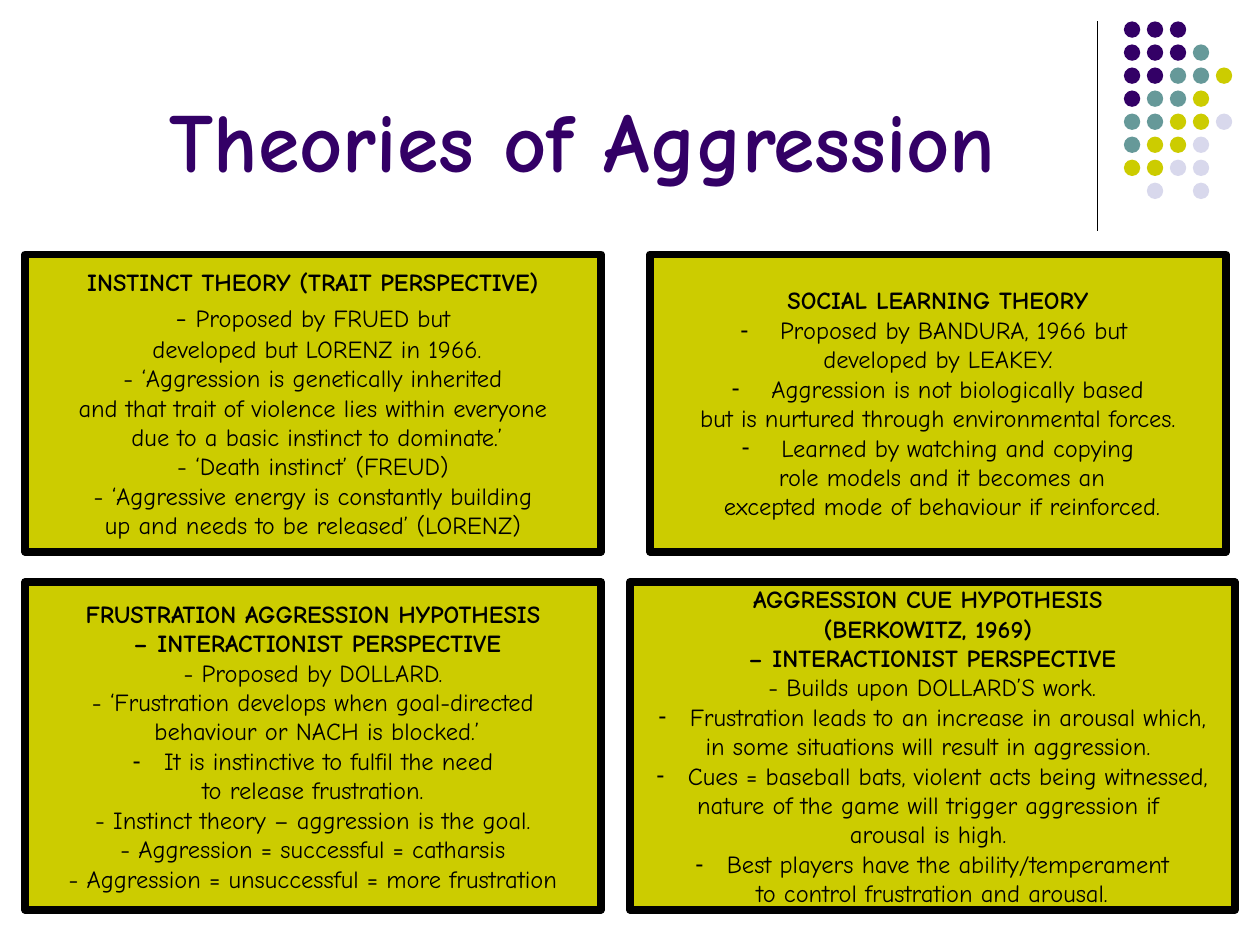
"""Build the Theories of Aggression slide with four theory panels."""
from dataclasses import dataclass
from typing import NamedTuple

from lxml.etree import SubElement
from pptx import Presentation
from pptx.dml.color import RGBColor
from pptx.enum.shapes import MSO_CONNECTOR, MSO_SHAPE
from pptx.enum.text import MSO_ANCHOR, MSO_AUTO_SIZE, PP_ALIGN
from pptx.oxml.ns import qn
from pptx.slide import Slide
from pptx.text.text import _Paragraph as Paragraph
from pptx.util import Inches, Pt

COLORS = {
    "purple": "330066",
    "teal": "669999",
    "lime": "CCCC00",
    "lavender": "D8D8EC",
    "black": "000000",
}
DOT_COLORS = {"P": "purple", "T": "teal", "L": "lime", "V": "lavender"}
DOT_ROWS = ["PPP", "PPPT", "PPTTL", "PTTL", "TTLLV", "TLLV", "LLVV", " V V"]
DOT_LEFT, DOT_TOP, DOT_SIZE = 8.92, 0.17, 0.13
DOT_STEP_X, DOT_STEP_Y = 0.73 / 4, 1.28 / 7
BODY_FONT = "Comic Neue"
BULLET_INDENT = Inches(0.25)


class Run(NamedTuple):
    """A piece of text with its size and font."""
    text: str
    size: int = 14
    font: str = BODY_FONT


class Line(NamedTuple):
    """One paragraph of a panel."""
    text: str
    bold: bool = False
    bulleted: bool = False
    prefix: tuple[Run, ...] = ()


@dataclass
class Panel:
    """A bordered box that describes one theory."""
    left: float
    top: float
    width: float
    height: float
    lines: list[Line]


def heading(text: str) -> Line:
    """Return a bold line."""
    return Line(text, bold=True)


def bullet(text: str) -> Line:
    """Return a line with a dash bullet."""
    return Line(text, bulleted=True)


PANELS = [
    Panel(0.2, 2.02, 4.57, 2.36, [
        heading("INSTINCT THEORY (TRAIT PERSPECTIVE)"),
        Line("Proposed by FRUED but", prefix=(Run("-", 16), Run(" ", 18, "Arial"))),
        Line(" developed but LORENZ in 1966."),
        Line("- ‘Aggression is genetically inherited"),
        Line("and that trait of violence lies within everyone"),
        Line(" due to a basic instinct to dominate.’"),
        Line("- ‘Death instinct’ (FREUD)"),
        Line("- ‘Aggressive energy is constantly building"),
        Line("up and needs to be released’ (LORENZ)"),
    ]),
    Panel(5.16, 2.02, 4.57, 2.36, [
        heading("SOCIAL LEARNING THEORY"),
        bullet(" Proposed by BANDURA, 1966 but "),
        Line("developed by LEAKEY."),
        bullet(" Aggression is not biologically based"),
        Line("but is nurtured through environmental forces."),
        bullet(" Learned by watching and copying"),
        Line(" role models and it becomes an"),
        Line(" excepted mode of behaviour if reinforced."),
    ]),
    Panel(0.2, 4.62, 4.57, 2.6, [
        heading("FRUSTRATION AGGRESSION HYPOTHESIS"),
        heading(" – INTERACTIONIST PERSPECTIVE"),
        Line("- Proposed by DOLLARD."),
        Line("- ‘Frustration develops when goal-directed"),
        Line(" behaviour or NACH is blocked.’"),
        bullet("It is instinctive to fulfil the need"),
        Line("to release frustration."),
        Line("- Instinct theory – aggression is the goal."),
        Line("- Aggression = successful = catharsis"),
        Line("- Aggression = unsuccessful = more frustration"),
    ]),
    Panel(5, 4.62, 4.8, 2.6, [
        heading("AGGRESSION CUE HYPOTHESIS "),
        heading("(BERKOWITZ, 1969) "),
        heading("– INTERACTIONIST PERSPECTIVE"),
        Line("- Builds upon DOLLARD’S work."),
        bullet("Frustration leads to an increase in arousal which,"),
        Line("in some situations will result in aggression. "),
        bullet("Cues = baseball bats, violent acts being witnessed,"),
        Line("nature of the game will trigger aggression if "),
        Line("arousal is high. "),
        bullet("Best players have the ability/temperament"),
        Line("to control frustration and arousal."),
    ]),
]


def color(name: str) -> RGBColor:
    """Look up a palette colour."""
    return RGBColor.from_string(COLORS[name])


def add_run(paragraph: Paragraph, piece: Run, bold: bool, color_name: str) -> None:
    """Append a formatted run."""
    run = paragraph.add_run()
    run.text = piece.text
    formats = {"size": Pt(piece.size), "name": piece.font, "bold": bold}
    for attribute, value in formats.items():
        setattr(run.font, attribute, value)
    run.font.color.rgb = color(color_name)


def add_dash_bullet(paragraph: Paragraph) -> None:
    """Give a paragraph a hanging dash."""
    properties = paragraph._p.get_or_add_pPr()
    properties.set("marL", str(BULLET_INDENT))
    properties.set("indent", str(-BULLET_INDENT))
    SubElement(properties, qn("a:buFont"), typeface="Arial")
    SubElement(properties, qn("a:buChar"), char="-")


def add_title(slide: Slide, text: str) -> None:
    """Place and format the title placeholder."""
    title = slide.shapes.title
    box = {"left": 0.5, "top": 0.13, "width": 8.25, "height": 1.42}
    for attribute, value in box.items():
        setattr(title, attribute, Inches(value))
    frame = title.text_frame
    frame.auto_size = MSO_AUTO_SIZE.NONE
    frame.vertical_anchor = MSO_ANCHOR.BOTTOM
    paragraph = frame.paragraphs[0]
    paragraph.alignment = PP_ALIGN.CENTER
    add_run(paragraph, Run(text, 48), True, "purple")


def add_divider(slide: Slide) -> None:
    """Draw the thin rule beside the dots."""
    line = slide.shapes.add_connector(
        MSO_CONNECTOR.STRAIGHT, Inches(8.71), Inches(0.17), Inches(8.71), Inches(1.83))
    line.line.color.rgb = color("black")
    line.line.width = Pt(0.75)
    SubElement(line._element.spPr, qn("a:effectLst"))


def add_dots(slide: Slide) -> None:
    """Draw the decorative grid of dots."""
    for row, codes in enumerate(DOT_ROWS):
        for column, code in enumerate(codes):
            if code == " ":
                continue
            dot = slide.shapes.add_shape(
                MSO_SHAPE.OVAL,
                Inches(DOT_LEFT + column * DOT_STEP_X),
                Inches(DOT_TOP + row * DOT_STEP_Y),
                Inches(DOT_SIZE), Inches(DOT_SIZE))
            dot.shadow.inherit = False
            dot.fill.solid()
            dot.fill.fore_color.rgb = color(DOT_COLORS[code])
            dot.line.fill.background()


def add_panel(slide: Slide, panel: Panel) -> None:
    """Draw one theory box with its text."""
    box = (panel.left, panel.top, panel.width, panel.height)
    shape = slide.shapes.add_shape(MSO_SHAPE.RECTANGLE, *map(Inches, box))
    shape.shadow.inherit = False
    shape.fill.solid()
    shape.fill.fore_color.rgb = color("lime")
    shape.line.color.rgb = color("black")
    shape.line.width = Pt(4.5)
    frame = shape.text_frame
    frame.word_wrap = False
    frame.vertical_anchor = MSO_ANCHOR.MIDDLE
    for index, line in enumerate(panel.lines):
        paragraph = frame.add_paragraph() if index else frame.paragraphs[0]
        paragraph.alignment = PP_ALIGN.CENTER
        if line.bulleted:
            add_dash_bullet(paragraph)
        for piece in (*line.prefix, Run(line.text)):
            add_run(paragraph, piece, line.bold, "black")


def main() -> None:
    """Build and save the presentation."""
    presentation = Presentation()
    presentation.slide_width, presentation.slide_height = Inches(10), Inches(7.5)
    slide = presentation.slides.add_slide(presentation.slide_layouts[5])
    add_divider(slide)
    add_dots(slide)
    add_title(slide, "Theories of Aggression")
    for panel in PANELS:
        add_panel(slide, panel)
    presentation.save("out.pptx")


if __name__ == "__main__":
    main()
